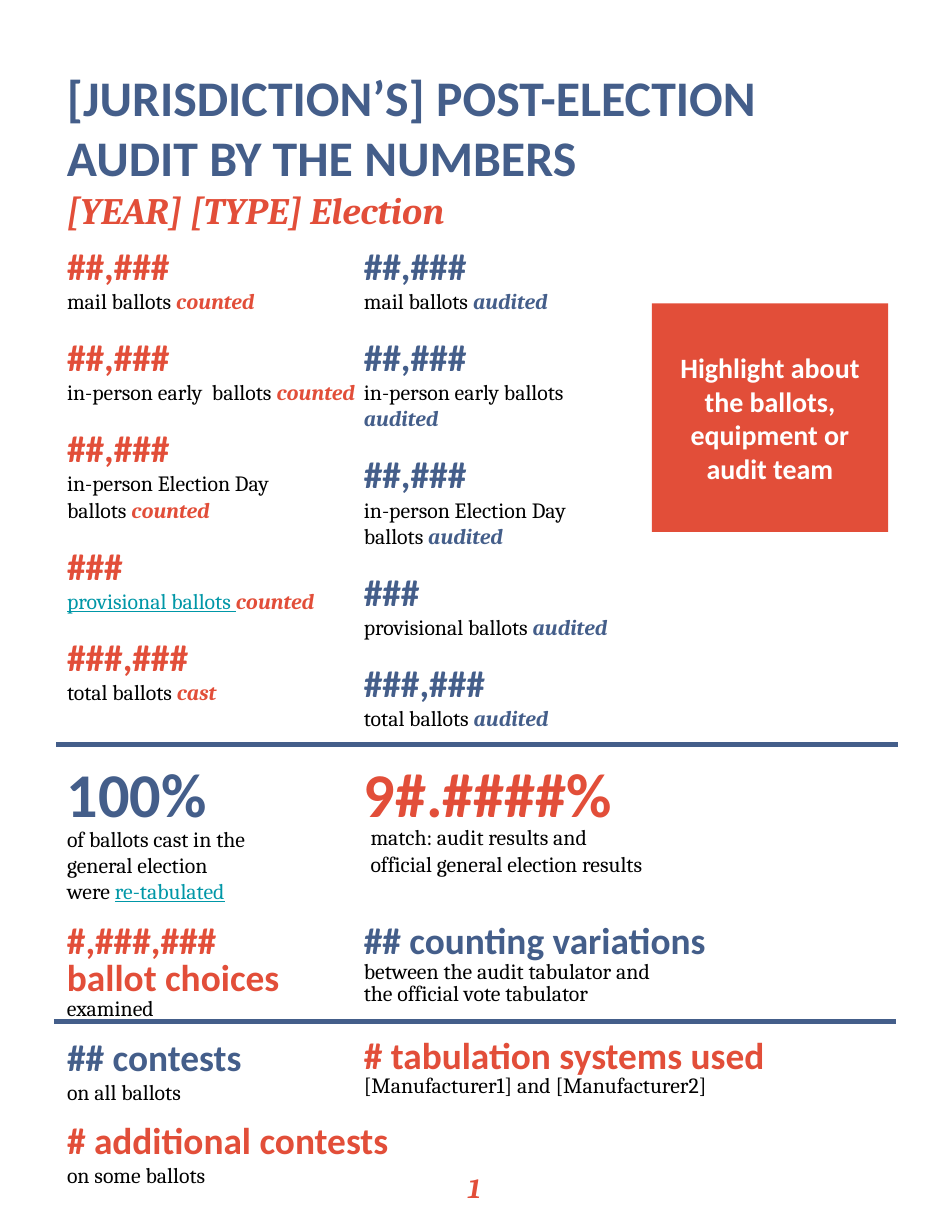
from lxml import etree
from pptx import Presentation
from pptx import util as u
from pptx.dml import color
from pptx.enum import shapes, text
from pptx.oxml import ns

HUES = {"blue": "445E8A", "red": "E24E39", "teal": "0097A7", "black": "000000", "white": "FFFFFF"}
FORMS = {
    "title": dict(name="Calibri", size=u.Pt(32), bold=True),
    "year": dict(name="Cambria", size=u.Pt(24), bold=True, italic=True),
    "huge": dict(name="Calibri", size=u.Pt(40), bold=True),
    "head": dict(name="Calibri", size=u.Pt(24), bold=True),
    "call": dict(name="Calibri", size=u.Pt(18), bold=True),
    "page": dict(name="Cambria", size=u.Pt(18), bold=True, italic=True),
    "body": dict(name="Cambria", size=u.Pt(14), bold=False),
    "mark": dict(name="Cambria", size=u.Pt(14), bold=True, italic=True),
    "link": dict(name="Cambria", size=u.Pt(14), bold=False, underline=True),
}
COUNTED = [
    ("##,###", "mail ballots ", "body", "counted"),
    ("##,###", "in-person early  ballots ", "body", "counted"),
    ("##,###", "in-person Election Day \nballots ", "body", "counted"),
    ("###", "provisional ballots ", "link", "counted"),
    ("###,###", "total ballots ", "body", "cast"),
]
AUDITED = [
    ("##,###", "mail ballots ", "body", "audited"),
    ("##,###", "in-person early ballots \n", "body", "audited"),
    ("##,###", "in-person Election Day \nballots ", "body", "audited"),
    ("###", "provisional ballots ", "body", "audited"),
    ("###,###", "total ballots ", "body", "audited"),
]


def write(frame, paras, pad=0.1, **form):
    frame.word_wrap = True
    frame.margin_left = frame.margin_right = u.Inches(0.1)
    frame.margin_top = frame.margin_bottom = u.Inches(pad)
    for spot, runs in enumerate(paras):
        para = frame.add_paragraph() if spot else frame.paragraphs[0]
        for key, val in form.items():
            setattr(para, key, val)
        for words, style, hue in runs:
            for turn, line in enumerate(words.split("\n")):
                if turn:
                    para.add_line_break()
                if not line:
                    continue
                run = para.add_run()
                run.text = line
                for key, val in FORMS[style].items():
                    setattr(run.font, key, val)
                run.font.color.rgb = color.RGBColor.from_string(HUES[hue])
    return frame


def label(slide, box, paras, pad=0.1, **form):
    area = slide.shapes.add_textbox(*map(u.Inches, box))
    return write(area.text_frame, paras, pad, **form)


def rule(slide, x, y, width):
    ends = map(u.Inches, (x, y, x + width, y))
    line = slide.shapes.add_connector(shapes.MSO_CONNECTOR.STRAIGHT, *ends)
    line.line.color.rgb = color.RGBColor.from_string(HUES["blue"])
    line.line.width = u.Pt(3)
    etree.SubElement(line._element.spPr, ns.qn("a:effectLst"))


def header(slide, box):
    label(slide, box, [[
        ("[JURISDICTION’S] POST-ELECTION\nAUDIT BY THE NUMBERS \n", "title", "blue"),
        ("[YEAR] [TYPE] Election", "year", "red"),
    ]])


def tally(slide, box, hue, rows):
    paras = []
    for count, words, style, mark in rows:
        tone = "teal" if style == "link" else "black"
        paras += [[(count, "head", hue)], [(words, style, tone), (mark, "mark", hue)]]
    frame = label(slide, box, paras)
    for para in frame.paragraphs[1::2]:
        para.space_after = u.Pt(13)


def callout(slide, box):
    card = slide.shapes.add_shape(shapes.MSO_SHAPE.ROUNDED_RECTANGLE, *map(u.Inches, box))
    card.adjustments[0] = 0
    card.shadow.inherit = False
    card.fill.solid()
    card.fill.fore_color.rgb = color.RGBColor.from_string(HUES["red"])
    card.line.fill.background()
    words = "Highlight about the ballots, equipment or audit team"
    write(card.text_frame, [[(words, "call", "white")]], alignment=text.PP_ALIGN.CENTER)
    card.text_frame.vertical_anchor = text.MSO_ANCHOR.MIDDLE


def results(slide, box):
    x, y, width, high = box
    mid = x + 2.65
    label(slide, (x, y, 2.66, 0.78), [[("100%", "huge", "blue")]], 0.05)
    label(slide, (mid, y, 5, 0.78), [[("9#.####%", "huge", "red")]], 0.05)
    label(slide, (x, y + 0.63, 2.71, 0.81), [[
        ("of ballots cast in the \ngeneral election \nwere ", "body", "black"),
        ("re-tabulated", "link", "teal"),
    ]], 0.05)
    label(slide, (mid + 0.06, y + 0.62, 4.79, 0.57), [[
        ("match: audit results and \nofficial general election results", "body", "black"),
    ]], 0.05)
    label(slide, (x, y + 1.52, 4.1, 0.97), [[
        ("#,###,### \nballot choices\n", "head", "red"),
        ("examined", "body", "black"),
    ]], 0.05, line_spacing=0.83)
    label(slide, (mid, y + 1.52, 4.79, 0.83), [[
        ("## counting variations\n", "head", "blue"),
        ("between the audit tabulator and \nthe official vote tabulator", "body", "black"),
    ]], 0.05, line_spacing=0.83)


def contests(slide, box):
    x, y, width, high = box
    frame = label(slide, (x, y, 3.75, high), [
        [("## contests\n", "head", "blue"), ("on all ballots", "body", "black")],
        [("# additional contests\n", "head", "red"), ("on some ballots", "body", "black")],
    ])
    frame.paragraphs[1].space_before = u.Pt(8)
    label(slide, (x + 2.65, y + 0.05, 4.1, 0.67), [[
        ("# tabulation systems used\n", "head", "red"),
        ("[Manufacturer1] and [Manufacturer2]", "body", "black"),
    ]], line_spacing=0.83)


def footer(slide, box):
    label(slide, box, [[("1", "page", "red")]], alignment=text.PP_ALIGN.CENTER)


def main():
    deck = Presentation()
    deck.slide_width, deck.slide_height = u.Inches(8.5), u.Inches(11)
    slide = deck.slides.add_slide(deck.slide_layouts[6])
    header(slide, (0.5, 0.5, 7.5, 1.58))
    tally(slide, (0.5, 2.07, 2.79, 5.04), "red", COUNTED)
    tally(slide, (3.15, 2.07, 2.79, 4.73), "blue", AUDITED)
    callout(slide, (5.82, 2.71, 2.11, 2.04))
    rule(slide, 0.5, 6.65, 7.52)
    results(slide, (0.5, 6.69, 7.5, 2.49))
    rule(slide, 0.48, 9.12, 7.52)
    contests(slide, (0.5, 9.13, 7.5, 1.56))
    footer(slide, (-0.03, 10.35, 8.53, 0.35))
    deck.save("out.pptx")


if __name__ == "__main__":
    main()
